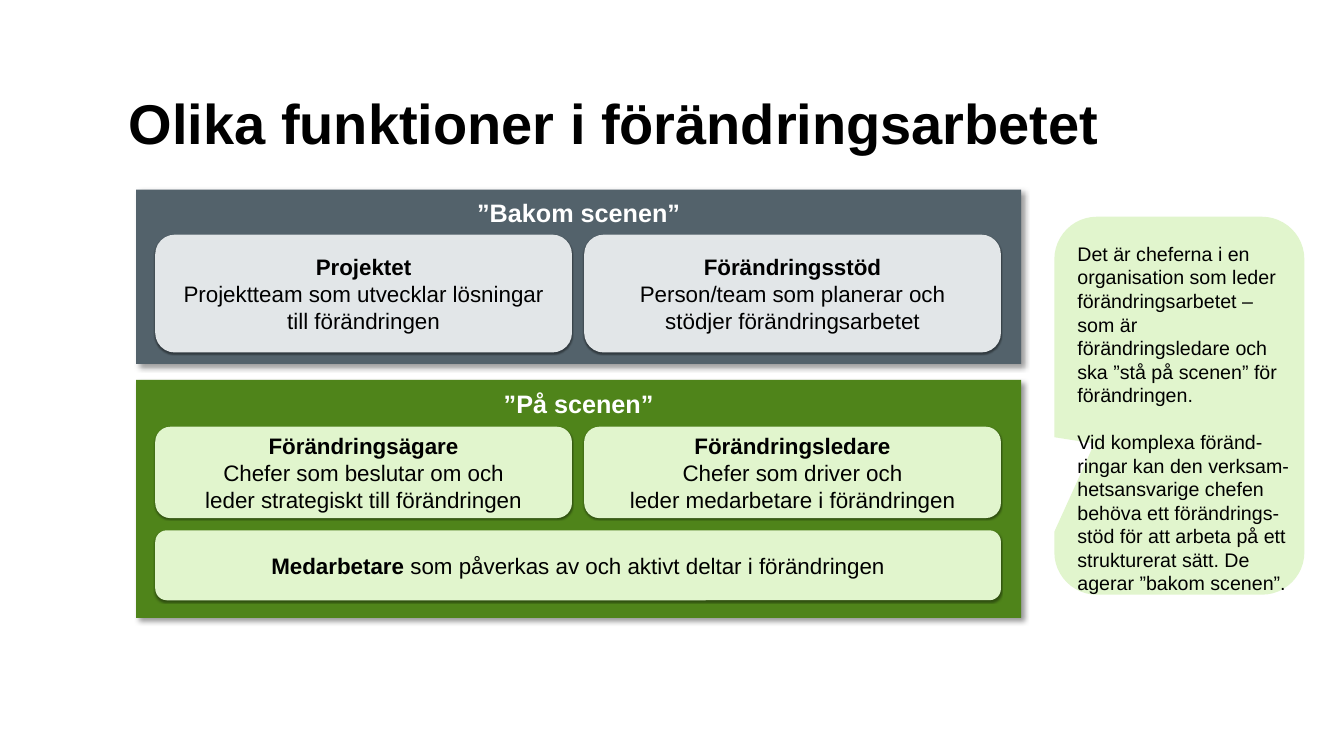
from dataclasses import dataclass

from lxml import etree
from pptx import Presentation
from pptx.dml.color import RGBColor
from pptx.enum import shapes, text
from pptx.oxml import ns
from pptx.util import Pt


@dataclass(frozen=True)
class Theme:
    font: str = "Arial"
    black: str = "000000"
    white: str = "FFFFFF"
    slate: str = "53626B"
    mist: str = "E2E6E8"
    green: str = "4F841A"
    lime: str = "E1F5CD"
    title_size: int = 40
    heading_size: int = 18
    card_size: int = 16
    note_size: int = 14


theme = Theme()
PANEL_SHADOW = {"blur": 4, "distance": 3, "angle": 45}
CARD_SHADOW = {"blur": 1, "distance": 1, "angle": 90}


def write(holder, paragraphs, size, color=theme.black, gap=0, **layout):
    """Fill holder with paragraphs, each a list of (wording, bold) runs."""
    frame = holder.text_frame
    align = layout.pop("align", text.PP_ALIGN.LEFT)
    for name, value in {"word_wrap": True, **layout}.items():
        setattr(frame, name, value)
    for index, runs in enumerate(paragraphs):
        paragraph = frame.add_paragraph() if index else frame.paragraphs[0]
        paragraph.alignment = align
        if index and gap:
            paragraph.space_before = Pt(gap)
        for wording, bold in runs:
            run = paragraph.add_run()
            run.text = wording
            for name, value in {"name": theme.font, "size": Pt(size), "bold": bold}.items():
                setattr(run.font, name, value)
            run.font.color.rgb = RGBColor.from_string(color)


def add_block(kind, box, fill, shadow=None):
    block = slide.shapes.add_shape(kind, *map(Pt, box))
    block.fill.solid()
    block.fill.fore_color.rgb = RGBColor.from_string(fill)
    block.line.fill.background()
    block.shadow.inherit = False
    if shadow:
        effects = block.element.spPr.find(ns.qn("a:effectLst"))
        outer = etree.SubElement(
            effects, ns.qn("a:outerShdw"), blurRad=str(Pt(shadow["blur"])),
            dist=str(Pt(shadow["distance"])), dir=str(shadow["angle"] * 60000),
            algn="ctr", rotWithShape="0")
        tint = etree.SubElement(outer, ns.qn("a:srgbClr"), val=theme.black)
        etree.SubElement(tint, ns.qn("a:alpha"), val="40000")
    return block


deck = Presentation()
deck.slide_width, deck.slide_height = Pt(960), Pt(540)
slide = deck.slides.add_slide(deck.slide_layouts[6])

title = slide.shapes.add_textbox(Pt(85), Pt(57), Pt(811), Pt(60.5))
write(title, [[("Olika funktioner i förändringsarbetet", True)]], theme.title_size,
      vertical_anchor=text.MSO_ANCHOR.MIDDLE)

# Panels: heading, top, height, colour
block_layout = {
    "align": text.PP_ALIGN.CENTER,
    "margin_left": Pt(14.4), "margin_right": Pt(14.4),
    "margin_top": Pt(5.8), "margin_bottom": Pt(5.8),
}
panels = [
    ("”Bakom scenen”", 135.4, 124.6, theme.slate),
    ("”På scenen”", 271.4, 170, theme.green),
]
for heading, top, height, fill in panels:
    panel = add_block(shapes.MSO_SHAPE.RECTANGLE, (97.2, top, 632.2, height), fill, PANEL_SHADOW)
    write(panel, [[(heading, True)]], theme.heading_size, theme.white,
          vertical_anchor=text.MSO_ANCHOR.TOP, **block_layout)

# Rows of equal cards: top, height, colour, cards
card_left, row_width, card_gap = 110.9, 604.1, 8.7
rows = [
    (167.6, 84.2, theme.mist, [
        [[("Projektet", True)],
         [("Projektteam som utvecklar lösningar till förändringen", False)]],
        [[("Förändringsstöd", True)],
         [("Person/team som planerar och stödjer förändringsarbetet", False)]],
    ]),
    (304.8, 65.3, theme.lime, [
        [[("Förändringsägare", True)],
         [("Chefer som beslutar om och", False)],
         [("leder strategiskt till förändringen", False)]],
        [[("Förändringsledare", True)],
         [("Chefer som driver och", False)],
         [("leder medarbetare i förändringen", False)]],
    ]),
    (378.8, 50, theme.lime, [
        [[("Medarbetare ", True),
          ("som påverkas av och aktivt deltar i förändringen", False)]],
    ]),
]
for top, height, fill, roles in rows:
    width = (row_width - card_gap * (len(roles) - 1)) / len(roles)
    for column, role in enumerate(roles):
        left = card_left + column * (width + card_gap)
        card = add_block(shapes.MSO_SHAPE.ROUNDED_RECTANGLE, (left, top, width, height),
                         fill, CARD_SHADOW)
        write(card, role, theme.card_size,
              vertical_anchor=text.MSO_ANCHOR.MIDDLE, **block_layout)

# Side note
callout = add_block(shapes.MSO_SHAPE.ROUNDED_RECTANGULAR_CALLOUT,
                    (753.1, 154.8, 178.6, 270), theme.lime)
for index, value in enumerate((-0.34, 0.1, 0.17)):
    callout.adjustments[index] = value

note = slide.shapes.add_textbox(Pt(762.5), Pt(169.2), Pt(169.9), Pt(262))
write(note, [
    [("Det är cheferna i en organisation som leder förändringsarbetet – som är "
      "förändringsledare och ska ”stå på scenen” för förändringen.", False)],
    [("Vid komplexa föränd-ringar kan den verksam-hetsansvarige chefen behöva ett "
      "förändrings-stöd för att arbeta på ett strukturerat sätt. "
      "De agerar ”bakom scenen”.", False)],
], theme.note_size, gap=16.8, auto_size=text.MSO_AUTO_SIZE.SHAPE_TO_FIT_TEXT)

deck.save("out.pptx")
